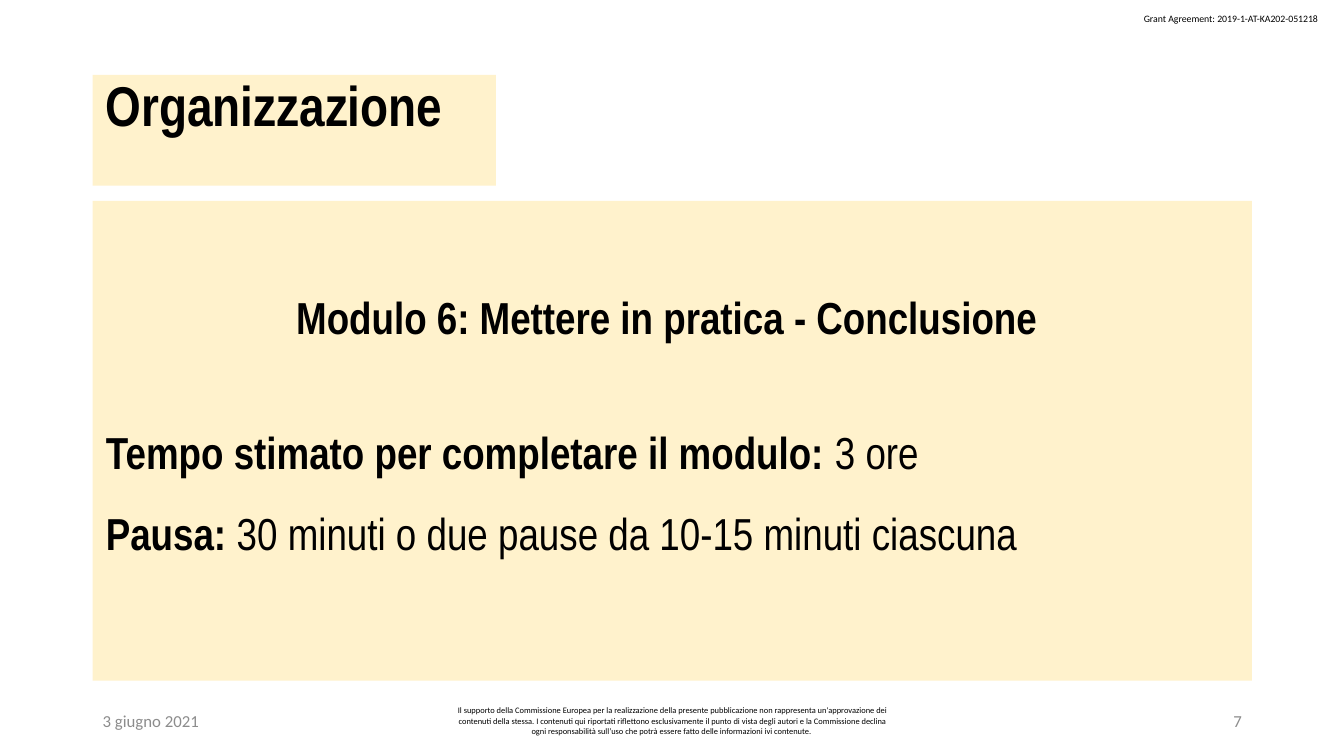
from lxml.etree import SubElement
from pptx import Presentation
from pptx.dml.color import RGBColor
from pptx.enum.text import MSO_ANCHOR, MSO_AUTO_SIZE, PP_ALIGN
from pptx.oxml.ns import qn
from pptx.util import Pt

BLACK = RGBColor(0, 0, 0)
GREY = RGBColor(0x8C, 0x8C, 0x8C)
CREAM = RGBColor(0xFF, 0xF2, 0xCC)
HEADING_FONT = "Arial Narrow"
SMALL_FONT = "Calibri"
MARGIN = 66.24
FOOTER_TOP, FOOTER_HEIGHT = 500.4, 28.8


class SlideBuilder:
    def __init__(self, prs):
        self.slide = prs.slides.add_slide(prs.slide_layouts[1])

    def style(self, run, font, size, color=BLACK, bold=False):
        run.font.name = font
        run.font.size = Pt(size)
        run.font.bold = bold
        run.font.color.rgb = color

    def panel(self, sp, box, top_inset):
        """Place a placeholder as a cream panel and return its text frame."""
        sp.left, sp.top, sp.width, sp.height = map(Pt, box)
        sp.fill.solid()
        sp.fill.fore_color.rgb = CREAM
        tf = sp.text_frame
        tf.auto_size = MSO_AUTO_SIZE.NONE
        tf.word_wrap = True
        tf.vertical_anchor = MSO_ANCHOR.TOP
        tf.margin_left = tf.margin_right = Pt(9.36)
        tf.margin_top, tf.margin_bottom = Pt(top_inset), Pt(5)
        return tf

    def title(self, text, box):
        tf = self.panel(self.slide.shapes.title, box, 2)
        tf.text = text
        p = tf.paragraphs[0]
        p.alignment = PP_ALIGN.LEFT
        p.line_spacing = 0.9
        self.style(p.runs[0], HEADING_FONT, 40, bold=True)

    def body(self, paragraphs, box):
        """Each paragraph is (alignment, line spacing, space before, bold text, plain text)."""
        tf = self.panel(self.slide.placeholders[1], box, 68)
        for i, (align, spacing, before, strong, plain) in enumerate(paragraphs):
            p = tf.add_paragraph() if i else tf.paragraphs[0]
            pPr = p._p.get_or_add_pPr()
            pPr.set("marL", "0")
            pPr.set("indent", "0")
            SubElement(pPr, qn("a:buNone"))
            p.alignment, p.line_spacing, p.space_before = align, spacing, Pt(before)
            for text, bold in ((strong, True), (plain, False)):
                if text:
                    r = p.add_run()
                    r.text = text
                    self.style(r, HEADING_FONT, 32, bold=bold)

    def label(self, text, box, size, color=BLACK, align=PP_ALIGN.LEFT,
              anchor=MSO_ANCHOR.MIDDLE, wrap=True):
        tf = self.slide.shapes.add_textbox(*map(Pt, box)).text_frame
        tf.word_wrap = wrap
        tf.vertical_anchor = anchor
        tf.text = text
        p = tf.paragraphs[0]
        p.alignment = align
        self.style(p.runs[0], SMALL_FONT, size, color)

    def footer(self, text, left, width, size, color, align):
        self.label(text, (left, FOOTER_TOP, width, FOOTER_HEIGHT), size, color, align)


def main():
    prs = Presentation()
    prs.slide_width, prs.slide_height = Pt(960), Pt(540)
    s = SlideBuilder(prs)
    s.title("Organizzazione", (MARGIN, 53.5, 288, 79.2))
    s.body([
        (PP_ALIGN.CENTER, 0.9, 0, "Modulo 6: Mettere in pratica - Conclusione ", ""),
        (PP_ALIGN.JUSTIFY, 1.5, 38, "Tempo stimato per completare il modulo: ", "3 ore"),
        (PP_ALIGN.JUSTIFY, 1.5, 0, "Pausa: ", "30 minuti o due pause da 10-15 minuti ciascuna"),
    ], (MARGIN, 143.5, 828, 342.7))
    s.label("Grant Agreement: 2019-1-AT-KA202-051218", (810, 5.76, 141.84, 15.84), 7,
            anchor=MSO_ANCHOR.TOP, wrap=False)
    s.footer("3 giugno 2021", MARGIN, 216, 12, GREY, PP_ALIGN.LEFT)
    s.footer("Il supporto della Commissione Europea per la realizzazione della presente "
             "pubblicazione non rappresenta un'approvazione dei contenuti della stessa. "
             "I contenuti qui riportati riflettono esclusivamente il punto di vista degli "
             "autori e la Commissione declina ogni responsabilità sull’uso che potrà essere "
             "fatto delle informazioni ivi contenute. ",
             318.24, 324, 6, BLACK, PP_ALIGN.CENTER)
    s.footer("7", 678.24, 216, 12, GREY, PP_ALIGN.RIGHT)
    prs.save("out.pptx")


if __name__ == "__main__":
    main()
